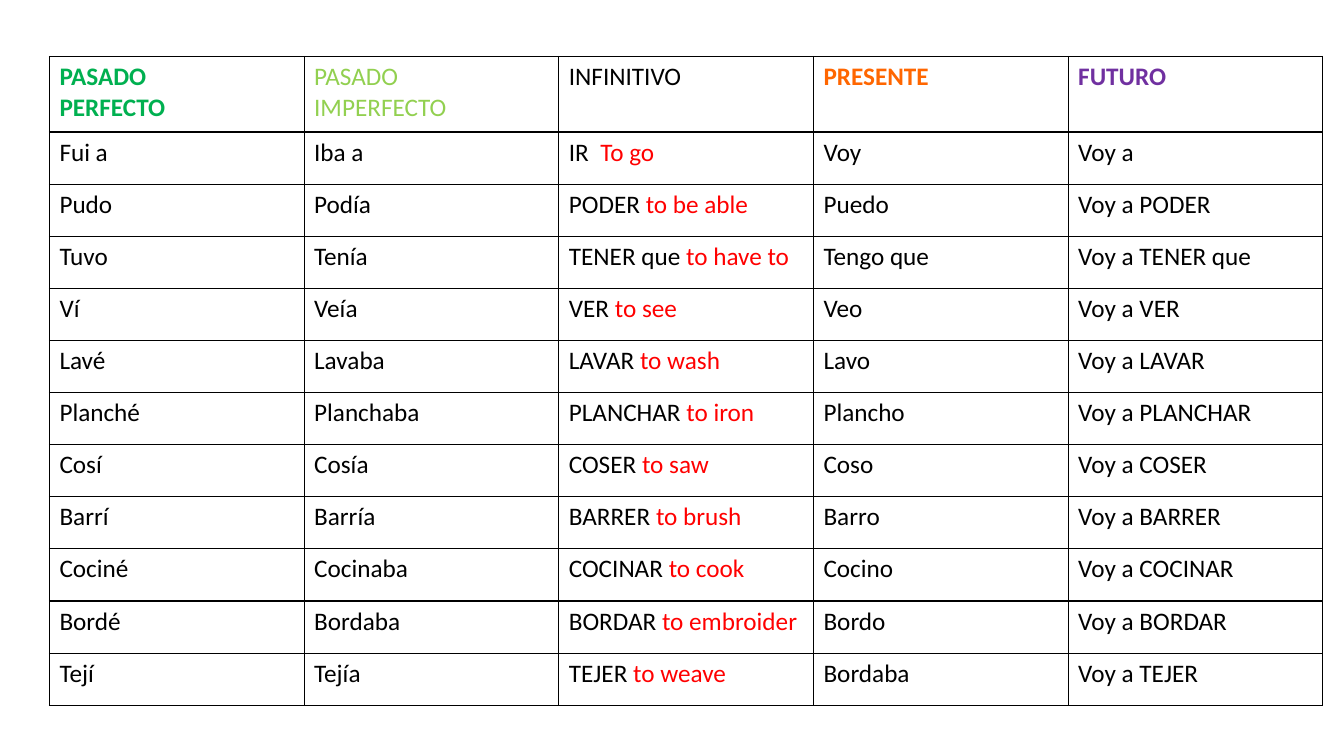
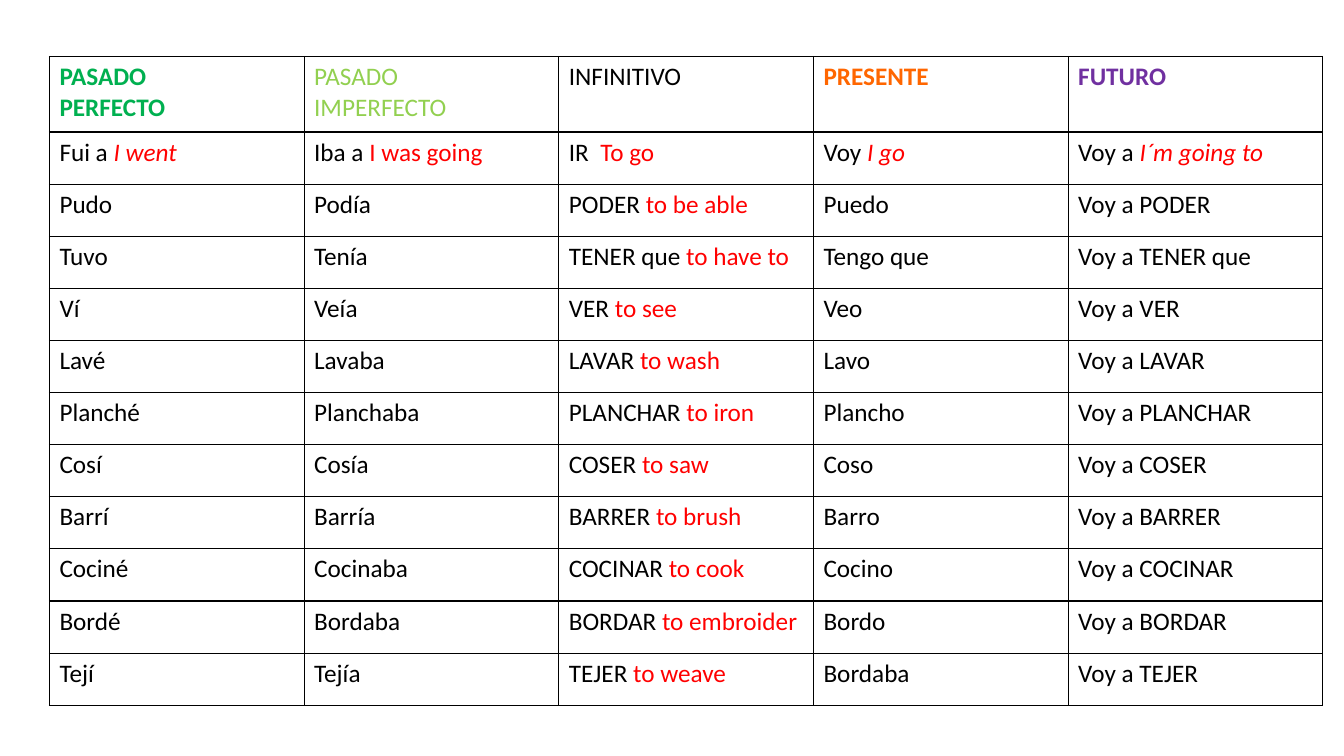
from dataclasses import dataclass
from typing import NamedTuple

from lxml import etree
from pptx import Presentation
from pptx.dml.color import RGBColor
from pptx.oxml.ns import qn
from pptx.util import Emu, Pt

PX = 9144  # EMU in one px, 100 px to the inch
BLANK_LAYOUT = 6
BORDER_TAGS = ("a:lnL", "a:lnR", "a:lnT", "a:lnB")


@dataclass(frozen=True)
class Theme:
    font: str = "Calibri"
    text_size: int = 18
    border_width: int = 1
    ink: str = "000000"
    gloss: str = "FF0000"
    perfect: str = "00B050"
    imperfect: str = "92D050"
    present: str = "FF6600"
    future: str = "7030A0"


class Frame(NamedTuple):
    left: int
    top: int
    width: int
    height: int


class Span(NamedTuple):
    text: str
    color: str
    bold: bool = False
    italic: bool = False


class Verb(NamedTuple):
    perfect: str
    imperfect: str
    infinitive: str
    meaning: str
    present: str


class Glosses(NamedTuple):
    """English meanings beside the forms of the first verb."""
    perfect: Span
    imperfect: Span
    present: Span
    future: Span


Cell = list[list[Span]]  # paragraphs, each a list of spans

THEME = Theme()
SLIDE_WIDTH, SLIDE_HEIGHT = 1333, 750
TABLE = Frame(49, 56, 1263, 644)
HEADER_HEIGHT = 75

HEADINGS = [
    [[Span("PASADO", THEME.perfect, bold=True)], [Span("PERFECTO", THEME.perfect, bold=True)]],
    [[Span("PASADO", THEME.imperfect)], [Span("IMPERFECTO", THEME.imperfect)]],
    [[Span("INFINITIVO", THEME.ink)]],
    [[Span("PRESENTE", THEME.present, bold=True)]],
    [[Span("FUTURO", THEME.future, bold=True)]],
]

VERBS = [
    Verb("Fui a", "Iba a", "IR ", "To go", "Voy"),
    Verb("Pudo", "Podía", "PODER", "to be able", "Puedo"),
    Verb("Tuvo", "Tenía", "TENER que", "to have to", "Tengo que"),
    Verb("Ví", "Veía", "VER", "to see", "Veo"),
    Verb("Lavé", "Lavaba", "LAVAR", "to wash", "Lavo"),
    Verb("Planché", "Planchaba", "PLANCHAR", "to iron", "Plancho"),
    Verb("Cosí", "Cosía", "COSER", "to saw", "Coso"),
    Verb("Barrí", "Barría", "BARRER", "to brush", "Barro"),
    Verb("Cociné", "Cocinaba", "COCINAR", "to cook", "Cocino"),
    Verb("Bordé", "Bordaba", "BORDAR", "to embroider", "Bordo"),
    Verb("Tejí", "Tejía", "TEJER", "to weave", "Bordaba"),
]

FIRST_VERB_GLOSSES = Glosses(
    perfect=Span("I went", THEME.gloss, italic=True),
    imperfect=Span("I was going", THEME.gloss),
    present=Span("I go", THEME.gloss, italic=True),
    future=Span("I´m going to", THEME.gloss, italic=True),
)


def form_cell(form: str, gloss: Span | None = None) -> Cell:
    """A verb form, followed by its meaning if there is one."""
    if gloss is None:
        return [[Span(form, THEME.ink)]]
    return [[Span(form + " ", THEME.ink), gloss]]


def verb_row(verb: Verb, glosses: Glosses | None, is_first: bool) -> list[Cell]:
    perfect, imperfect, present, future = glosses or (None,) * 4
    return [
        form_cell(verb.perfect, perfect),
        form_cell(verb.imperfect, imperfect),
        form_cell(verb.infinitive, Span(verb.meaning, THEME.gloss)),
        form_cell(verb.present, present),
        form_cell("Voy a" if is_first else f"Voy a {verb.infinitive}", future),
    ]


def table_rows(glosses: Glosses | None) -> list[list[Cell]]:
    first, *others = VERBS
    return [
        HEADINGS,
        verb_row(first, glosses, True),
        *(verb_row(verb, None, False) for verb in others),
    ]


def write_span(para, span: Span) -> None:
    run = para.add_run()
    run.text = span.text
    formats = {
        "name": THEME.font,
        "size": Pt(THEME.text_size),
        "bold": span.bold,
        "italic": span.italic,
    }
    for name, value in formats.items():
        setattr(run.font, name, value)
    run.font.color.rgb = RGBColor.from_string(span.color)


def add_borders(cell) -> None:
    properties = cell._tc.get_or_add_tcPr()
    # Borders come before the fill in the cell properties
    for position, tag in enumerate(BORDER_TAGS):
        line = etree.Element(qn(tag), w=str(Pt(THEME.border_width)))
        fill = etree.SubElement(line, qn("a:solidFill"))
        etree.SubElement(fill, qn("a:srgbClr"), val=THEME.ink)
        properties.insert(position, line)


def write_cell(cell, content: Cell) -> None:
    cell.fill.background()
    add_borders(cell)
    for index, spans in enumerate(content):
        box = cell.text_frame
        para = box.add_paragraph() if index else box.paragraphs[0]
        for span in spans:
            write_span(para, span)


def add_verb_table(page, rows: list[list[Cell]]) -> None:
    frame = [Emu(length * PX) for length in TABLE]
    table = page.shapes.add_table(len(rows), len(HEADINGS), *frame).table
    table.first_row = table.horz_banding = False

    # Equal columns; the verb rows share the height below the header
    for column in table.columns:
        column.width = Emu(TABLE.width * PX // len(HEADINGS))
    verb_height = (TABLE.height - HEADER_HEIGHT) * PX // len(VERBS)
    for index, row in enumerate(table.rows):
        row.height = Emu(verb_height if index else HEADER_HEIGHT * PX)

    for row, contents in zip(table.rows, rows):
        for cell, content in zip(row.cells, contents):
            write_cell(cell, content)


def main() -> None:
    deck = Presentation()
    deck.slide_width = Emu(SLIDE_WIDTH * PX)
    deck.slide_height = Emu(SLIDE_HEIGHT * PX)
    # The table without, then with, the meanings of the first verb
    for glosses in (None, FIRST_VERB_GLOSSES):
        page = deck.slides.add_slide(deck.slide_layouts[BLANK_LAYOUT])
        add_verb_table(page, table_rows(glosses))
    deck.save("out.pptx")


if __name__ == "__main__":
    main()
